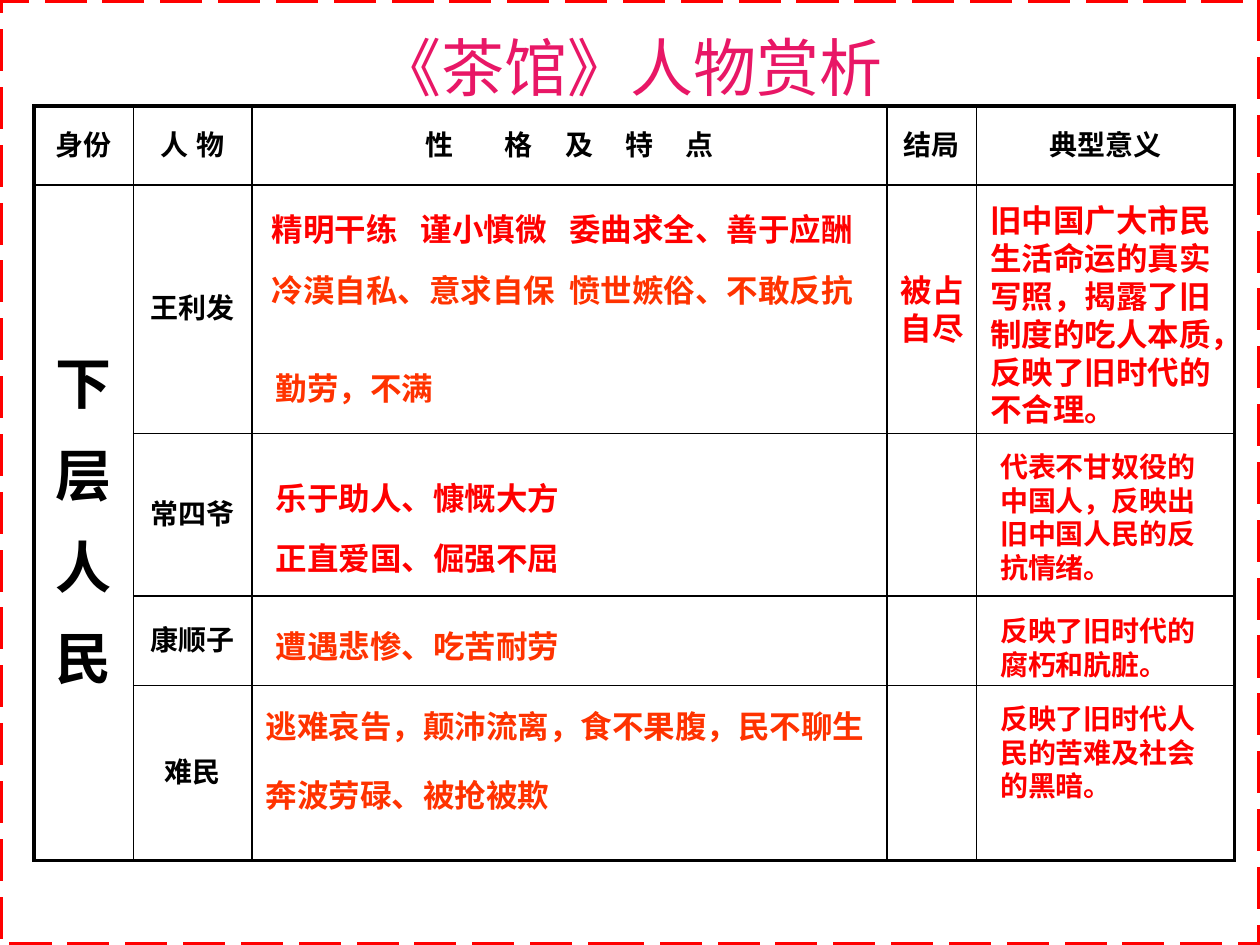
from lxml.etree import SubElement
from pptx import Presentation
from pptx.dml.color import RGBColor
from pptx.enum.dml import MSO_LINE
from pptx.enum.shapes import MSO_SHAPE
from pptx.enum.text import MSO_ANCHOR, MSO_AUTO_SIZE, PP_ALIGN
from pptx.oxml import parse_xml
from pptx.oxml.ns import nsdecls, qn
from pptx.util import Inches, Pt

RED, ORANGE, PINK, BLACK = "FF0000", "FF3300", "E81766", "000000"

COLUMN_WIDTHS = [0.79, 0.94, 5.04, 0.71, 2.05]
ROW_HEIGHTS = [0.63, 1.97, 1.29, 0.71, 1.39]
CHARACTERS = ["王利发", "常四爷", "康顺子", "难民"]
# Runs of the wide heading: text and letter spacing in points
TRAITS_HEADING = [("性 ", 12.5), ("格 及 特 ", 7), ("点", 0)]
HEADINGS = ["身份", "人 物", TRAITS_HEADING, "结局", "典型意义"]

# left, top, width, height, colour, lines
TRAITS = [
    (2.06, 1.62, 1.21, 0.4, RED, ["精明干练"]),
    (3.24, 1.62, 1.21, 0.4, RED, ["谨小慎微"]),
    (4.42, 1.62, 2.47, 0.4, RED, ["委曲求全、善于应酬"]),
    (2.06, 2.1, 2.47, 0.4, ORANGE, ["冷漠自私、意求自保"]),
    (4.42, 2.1, 2.47, 0.4, ORANGE, ["愤世嫉俗、不敢反抗"]),
    (7.05, 2.1, 0.7, 0.7, RED, ["被占", "自尽"]),
    (2.09, 2.88, 1.46, 0.4, ORANGE, ["勤劳，不满"]),
    (2.09, 3.75, 2.47, 0.4, RED, ["乐于助人、慷慨大方"]),
    (2.09, 4.23, 3.23, 0.4, RED, ["正直爱国、倔强不屈"]),
    (2.09, 4.93, 2.86, 0.4, ORANGE, ["遭遇悲惨、吃苦耐劳"]),
    (2.01, 5.56, 4.98, 0.4, ORANGE, ["逃难哀告，颠沛流离，食不果腹，民不聊生"]),
    (2.01, 6.11, 2.86, 0.4, ORANGE, ["奔波劳碌、被抢被欺"]),
    (7.76, 1.55, 2.22, 1.9, RED, ["旧中国广大市民", "生活命运的真实", "写照，揭露了旧",
                                  "制度的吃人本质，", "反映了旧时代的", "不合理。"]),
]
# top, height, text
MEANINGS = [
    (3.52, 1.17, "代表不甘奴役的中国人，反映出旧中国人民的反抗情绪。"),
    (4.82, 0.64, "反映了旧时代的腐朽和肮脏。"),
    (5.52, 0.9, "反映了旧时代人民的苦难及社会的黑暗。"),
]


def rgb(hex_colour):
    return RGBColor.from_string(hex_colour)


def write(frame, lines, size=16, colour=BLACK, font="Arial", bold=True,
          align=PP_ALIGN.LEFT, before=0, after=0, line_height=None):
    """Fill a text frame; a line is a string or a list of (text, letter spacing)."""
    for index, line in enumerate(lines):
        paragraph = frame.paragraphs[0] if index == 0 else frame.add_paragraph()
        paragraph.alignment = align
        paragraph.space_before = Pt(before)
        paragraph.space_after = Pt(after)
        if line_height is not None:
            paragraph.line_spacing = Pt(line_height)
        for text, spacing in ([(line, 0)] if isinstance(line, str) else line):
            run = paragraph.add_run()
            run.text = text
            run.font.size = Pt(size)
            run.font.bold = bold
            run.font.name = font
            run.font.color.rgb = rgb(colour)
            properties = run.font._element
            SubElement(properties, qn("a:ea")).set("typeface", font)
            if spacing:
                properties.set("spc", str(int(spacing * 100)))


def draw_borders(cell, widths):
    """Set the left, right, top and bottom borders, with widths in points."""
    properties = cell._tc.get_or_add_tcPr()
    for index, (side, width) in enumerate(zip("LRTB", widths)):
        properties.insert(index, parse_xml(
            f'<a:ln{side} {nsdecls("a")} w="{Pt(width)}"><a:solidFill>'
            f'<a:srgbClr val="{BLACK}"/></a:solidFill></a:ln{side}>'))


class SlideBuilder:
    thin, thick = 1, 2.25

    def __init__(self, slide):
        self.slide = slide

    def title(self, text, left, top, width, height):
        title = self.slide.shapes.title
        title.left, title.top = Inches(left), Inches(top)
        title.width, title.height = Inches(width), Inches(height)
        frame = title.text_frame
        frame.auto_size = MSO_AUTO_SIZE.NONE
        frame.word_wrap = False
        frame.vertical_anchor = MSO_ANCHOR.TOP
        write(frame, [text], size=36, colour=PINK, font="Noto Sans CJK JP",
              bold=False, align=PP_ALIGN.CENTER)

    def cell_text(self, cell, lines, size=16, before=3.2, after=0):
        cell.vertical_anchor = MSO_ANCHOR.MIDDLE
        write(cell.text_frame, lines, size=size, align=PP_ALIGN.CENTER,
              before=before, after=after)

    def table(self, left, top):
        last_row, last_column = len(ROW_HEIGHTS) - 1, len(COLUMN_WIDTHS) - 1
        table = self.slide.shapes.add_table(
            len(ROW_HEIGHTS), len(COLUMN_WIDTHS), Inches(left), Inches(top),
            Inches(sum(COLUMN_WIDTHS)), Inches(sum(ROW_HEIGHTS))).table
        for column, width in zip(table.columns, COLUMN_WIDTHS):
            column.width = Inches(width)
        table.cell(1, 0).merge(table.cell(last_row, 0))
        for r, height in enumerate(ROW_HEIGHTS):
            table.rows[r].height = Inches(height)
            for c in range(len(COLUMN_WIDTHS)):
                cell = table.cell(r, c)
                cell.fill.background()
                on_bottom = r == last_row or cell.is_merge_origin
                on_edge = (c == 0, c == last_column, r == 0, on_bottom)
                draw_borders(cell, [self.thick if edge else self.thin for edge in on_edge])

        for c, heading in enumerate(HEADINGS):
            self.cell_text(table.cell(0, c), [heading])
        self.cell_text(table.cell(1, 0), list("下层人民"), size=32, before=11.5, after=5)
        for r, character in enumerate(CHARACTERS, start=1):
            self.cell_text(table.cell(r, 1), [character])

    def text(self, lines, left, top, width, height, size=18, colour=RED, wrap=False):
        box = self.slide.shapes.add_textbox(
            Inches(left), Inches(top), Inches(width), Inches(height))
        box.text_frame.word_wrap = wrap
        box.text_frame.auto_size = MSO_AUTO_SIZE.SHAPE_TO_FIT_TEXT
        write(box.text_frame, lines, size=size, colour=colour, line_height=size * 1.2)

    def dashed_frame(self, width, height):
        frame = self.slide.shapes.add_shape(MSO_SHAPE.RECTANGLE, 0, 0, width, height)
        frame.shadow.inherit = False
        frame.fill.background()
        frame.line.color.rgb = rgb(RED)
        frame.line.width = Pt(3)
        frame.line.dash_style = MSO_LINE.LONG_DASH


def main():
    deck = Presentation()
    deck.slide_width, deck.slide_height = Inches(10), Inches(7.5)
    builder = SlideBuilder(deck.slides.add_slide(deck.slide_layouts[5]))
    builder.title("《茶馆》人物赏析", 2.7, 0.18, 4.6, 0.5)
    builder.table(0.27, 0.84)
    for left, top, width, height, colour, lines in TRAITS:
        builder.text(lines, left, top, width, height, colour=colour)
    for top, height, meaning in MEANINGS:
        builder.text([meaning], 7.84, top, 1.9, height, size=16, wrap=True)
    builder.dashed_frame(deck.slide_width, deck.slide_height)
    deck.save("out.pptx")


if __name__ == "__main__":
    main()
